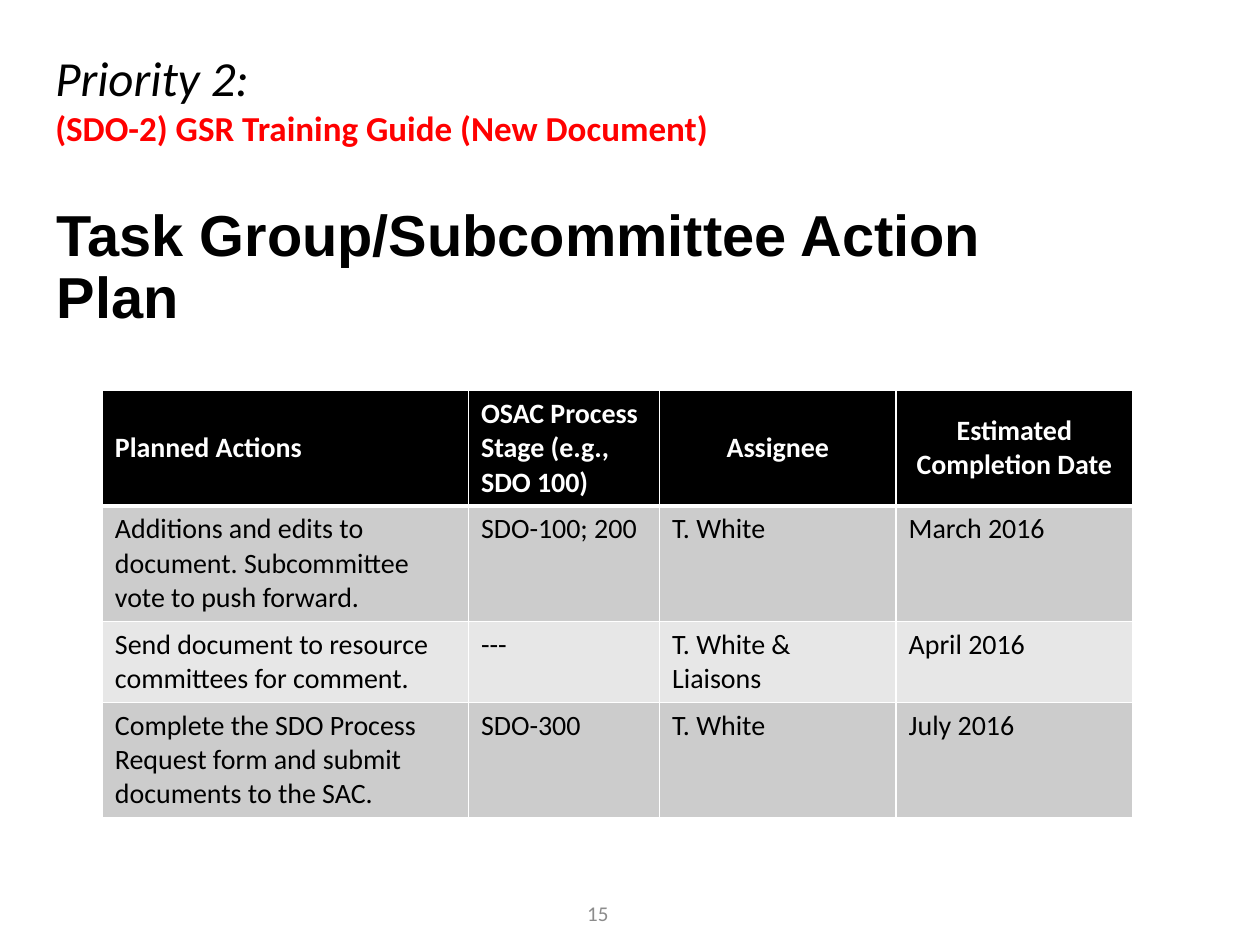
import pptx
import pptx.util
import pptx.dml.color
import pptx.enum.text
import pptx.oxml
import pptx.oxml.ns
from lxml import etree

Pt = pptx.util.Pt
ALIGN = pptx.enum.text.PP_ALIGN
ANCHOR = pptx.enum.text.MSO_ANCHOR

COLORS = {
    "ink": "000000", "accent": "FF0000", "paper": "FFFFFF",
    "odd_row": "CCCCCC", "even_row": "E7E7E7", "page": "8C8C8C",
}
TITLE = "Task Group/Subcommittee Action Plan"
PRIORITY = "Priority 2:"
DOCUMENT = "(SDO-2) GSR Training Guide (New Document)"
PAGE_NUMBER = "15"
PLAN = [
    ("Planned Actions", "OSAC Process Stage (e.g., SDO 100)", "Assignee",
     "Estimated Completion Date"),
    ("Additions and edits to document. Subcommittee vote to push forward.",
     "SDO-100; 200", "T. White", "March 2016"),
    ("Send document to resource committees for comment.",
     "---", "T. White & Liaisons", "April 2016"),
    ("Complete the SDO Process Request form and submit documents to the SAC.",
     "SDO-300", "T. White", "July 2016"),
]
COLUMN_WIDTHS = [209.2, 109.2, 135.2, 135.2]
ROW_HEIGHTS = [65.2, 65.2, 46, 65.2]
CENTERED_HEADINGS = ("Assignee", "Estimated Completion Date")


def rgb(name):
    return pptx.dml.color.RGBColor.from_string(COLORS[name])


def style(paragraph, size, color, face="Calibri", bold=False, italic=False,
          align=ALIGN.LEFT):
    paragraph.alignment = align
    font = paragraph.font
    font.name, font.size, font.bold, font.italic = face, Pt(size), bold, italic
    font.color.rgb = rgb(color)


def add_text_box(slide, left, top, width, height, anchor):
    frame = slide.shapes.add_textbox(
        Pt(left), Pt(top), Pt(width), Pt(height)).text_frame
    frame.word_wrap = True
    frame.vertical_anchor = anchor
    return frame


def set_borders(cell, widths):
    """Draw white cell edges; widths maps L, R, T, B to points."""
    properties = cell._tc.get_or_add_tcPr()
    for index, (side, width) in enumerate(widths.items()):
        line = etree.Element(pptx.oxml.ns.qn(f"a:ln{side}"), w=str(Pt(width)))
        fill = etree.SubElement(line, pptx.oxml.ns.qn("a:solidFill"))
        etree.SubElement(fill, pptx.oxml.ns.qn("a:srgbClr"),
                         val=COLORS["paper"])
        properties.insert(index, line)


def add_title(slide):
    title = slide.shapes.title
    title.left, title.top, title.width, title.height = map(
        Pt, (25.2, 101.5, 620.6, 104.4))
    frame = title.text_frame
    frame.text = TITLE
    frame.word_wrap = True
    frame.auto_size = pptx.enum.text.MSO_AUTO_SIZE.NONE
    frame.vertical_anchor = ANCHOR.MIDDLE
    frame.paragraphs[0].line_spacing = 0.9
    style(frame.paragraphs[0], 33, "ink", face="Arial", bold=True)


def add_plan(slide):
    table = slide.shapes.add_table(
        len(PLAN), len(COLUMN_WIDTHS), Pt(58.5), Pt(223.2),
        Pt(sum(COLUMN_WIDTHS)), Pt(sum(ROW_HEIGHTS))).table
    for column, width in zip(table.columns, COLUMN_WIDTHS):
        column.width = Pt(width)
    for r, (row, height) in enumerate(zip(table.rows, ROW_HEIGHTS)):
        row.height = Pt(height)
        header = r == 0
        row_fill = "ink" if header else "odd_row" if r % 2 else "even_row"
        for cell, text in zip(row.cells, PLAN[r]):
            cell.text = text
            cell.vertical_anchor = ANCHOR.MIDDLE if header else ANCHOR.TOP
            cell.fill.solid()
            cell.fill.fore_color.rgb = rgb(row_fill)
            centered = header and text in CENTERED_HEADINGS
            style(cell.text_frame.paragraphs[0], 16,
                  "paper" if header else "ink", bold=header,
                  align=ALIGN.CENTER if centered else ALIGN.LEFT)
            set_borders(cell, {"L": 1, "R": 1, "T": 3 if r == 1 else 1,
                               "B": 3 if header else 1})


def main():
    deck = pptx.Presentation()
    deck.slide_width, deck.slide_height = Pt(720), Pt(540)
    slide = deck.slides.add_slide(deck.slide_layouts[5])
    add_title(slide)
    add_plan(slide)

    heading = add_text_box(slide, 24.5, 23.8, 591.8, 65.5, ANCHOR.TOP)
    heading.text = f"{PRIORITY}\n{DOCUMENT}"
    style(heading.paragraphs[0], 28, "ink", italic=True)
    style(heading.paragraphs[1], 20, "accent", bold=True)

    page = add_text_box(slide, 260.6, 507.6, 162, 28.8, ANCHOR.MIDDLE)
    page.text = PAGE_NUMBER
    style(page.paragraphs[0], 12, "page", align=ALIGN.CENTER)
    deck.save("out.pptx")


if __name__ == "__main__":
    main()
